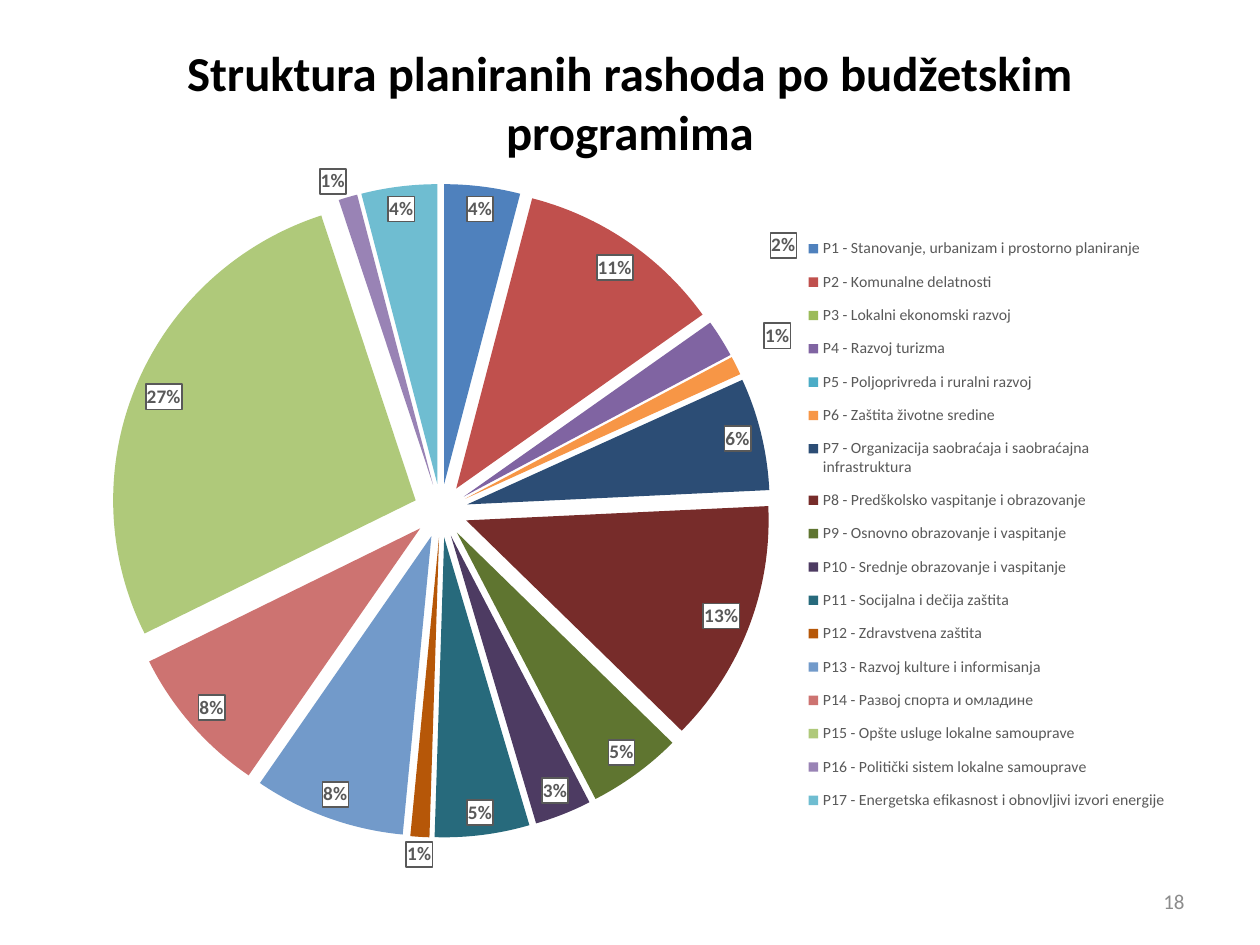
from pptx import Presentation
from pptx.chart.data import CategoryChartData
from pptx.dml.color import RGBColor
from pptx.enum.chart import XL_CHART_TYPE as ChartType, XL_LEGEND_POSITION as LegendPos
from pptx.enum.text import MSO_ANCHOR as Anchor, PP_ALIGN as Align
from pptx.oxml import parse_xml
from pptx.oxml.ns import nsdecls, qn
from pptx.util import Inches, Pt

FONT = "Calibri"
BLACK = RGBColor(0x00, 0x00, 0x00)
GRAY = RGBColor(0x59, 0x59, 0x59)
LIGHT_GRAY = RGBColor(0x8C, 0x8C, 0x8C)
WHITE = RGBColor(0xFF, 0xFF, 0xFF)

# Budget programme, share in percent, slice colour
PROGRAMMES = [
    ("P1 - Stanovanje, urbanizam i prostorno planiranje", 4, RGBColor(0x4F, 0x81, 0xBD)),
    ("P2 - Komunalne delatnosti", 11, RGBColor(0xC0, 0x50, 0x4D)),
    ("P3 - Lokalni ekonomski razvoj", 0, RGBColor(0x9B, 0xBB, 0x59)),
    ("P4 - Razvoj turizma", 2, RGBColor(0x80, 0x64, 0xA2)),
    ("P5 - Poljoprivreda i ruralni razvoj", 0, RGBColor(0x4B, 0xAC, 0xC6)),
    ("P6 - Zaštita životne sredine", 1, RGBColor(0xF7, 0x96, 0x46)),
    ("P7 - Organizacija saobraćaja i saobraćajna infrastruktura", 6, RGBColor(0x2C, 0x4D, 0x75)),
    ("P8 - Predškolsko vaspitanje i obrazovanje", 13, RGBColor(0x77, 0x2C, 0x2A)),
    ("P9 - Osnovno obrazovanje i vaspitanje", 5, RGBColor(0x5F, 0x75, 0x30)),
    ("P10 - Srednje obrazovanje i vaspitanje", 3, RGBColor(0x4D, 0x3B, 0x62)),
    ("P11 - Socijalna i dečija zaštita", 5, RGBColor(0x27, 0x6A, 0x7C)),
    ("P12 - Zdravstvena zaštita", 1, RGBColor(0xB6, 0x57, 0x08)),
    ("P13 - Razvoj kulture i informisanja", 8, RGBColor(0x72, 0x9A, 0xCA)),
    ("P14 - Развој спорта и омладине", 8, RGBColor(0xCD, 0x73, 0x71)),
    ("P15 - Opšte usluge lokalne samouprave", 27, RGBColor(0xAF, 0xC9, 0x7A)),
    ("P16 - Politički sistem lokalne samouprave", 1, RGBColor(0x99, 0x83, 0xB5)),
    ("P17 - Energetska efikasnost i obnovljivi izvori energije", 4, RGBColor(0x6F, 0xBD, 0xD1)),
]
# Labels of the crowded slices, moved by a share of the chart size
LABEL_SHIFTS = {2: (0, -0.1), 3: (0.04, -0.11), 4: (0.03, -0.06), 5: (0.02, -0.02)}


def add_text(slide, box, text, size, color, align, bold=False):
    tf = slide.shapes.add_textbox(*map(Inches, box)).text_frame
    tf.word_wrap = True
    tf.vertical_anchor = Anchor.MIDDLE
    p = tf.paragraphs[0]
    p.alignment = align
    r = p.add_run()
    r.text = text
    r.font.name, r.font.size, r.font.bold = FONT, Pt(size), bold
    r.font.color.rgb = color


def layout_xml(x, y, size=None, inner=False):
    """Manual layout: an offset for a label, a full box when a size is given."""
    target = '<c:layoutTarget val="inner"/>' if inner else ""
    modes = '<c:xMode val="edge"/><c:yMode val="edge"/>' if size else ""
    extent = f'<c:w val="{size[0]}"/><c:h val="{size[1]}"/>' if size else ""
    return (f'<c:layout {nsdecls("c")}><c:manualLayout>{target}{modes}'
            f'<c:x val="{x}"/><c:y val="{y}"/>{extent}</c:manualLayout></c:layout>')


def labels_xml():
    """Boxed percent labels, with the crowded ones shifted."""
    style = (
        '<c:numFmt formatCode="0%" sourceLinked="0"/>'
        f'<c:spPr><a:solidFill><a:srgbClr val="{WHITE}"/></a:solidFill>'
        f'<a:ln w="12700"><a:solidFill><a:srgbClr val="{GRAY}"/></a:solidFill></a:ln></c:spPr>'
        '<c:txPr><a:bodyPr/><a:lstStyle/><a:p><a:pPr><a:defRPr sz="1100" b="1">'
        f'<a:solidFill><a:srgbClr val="{GRAY}"/></a:solidFill><a:latin typeface="{FONT}"/>'
        '</a:defRPr></a:pPr><a:endParaRPr lang="sr-Latn-RS"/></a:p></c:txPr>'
        '<c:dLblPos val="bestFit"/><c:showLegendKey val="0"/><c:showVal val="0"/>'
        '<c:showCatName val="0"/><c:showSerName val="0"/><c:showPercent val="1"/>'
        '<c:showBubbleSize val="0"/>')
    shifted = "".join(
        f'<c:dLbl><c:idx val="{i}"/>{layout_xml(*shift)}{style}</c:dLbl>'
        for i, shift in LABEL_SHIFTS.items())
    return (f'<c:dLbls {nsdecls("c", "a")}>{shifted}{style}'
            '<c:showLeaderLines val="0"/></c:dLbls>')


def add_programme_pie(slide, box):
    data = CategoryChartData()
    data.categories = [name for name, _, _ in PROGRAMMES]
    data.add_series("Series 1", [share for _, share, _ in PROGRAMMES])
    chart = slide.shapes.add_chart(ChartType.PIE, *map(Inches, box), data).chart
    chart.has_title = False
    chart.font.name, chart.font.size = FONT, Pt(10)
    chart.font.color.rgb = BLACK

    # Slices
    plot = chart.plots[0]
    plot.vary_by_categories = True
    series = plot.series[0]
    for i, (_, _, color) in enumerate(PROGRAMMES):
        fill = series.points[i].format.fill
        fill.solid()
        fill.fore_color.rgb = color

    # Explosion and labels
    ser = series._element
    ser.find(qn("c:dPt")).addprevious(
        parse_xml(f'<c:explosion {nsdecls("c")} val="9"/>'))
    ser.find(qn("c:cat")).addprevious(parse_xml(labels_xml()))

    # Plot position
    area = chart.element.chart.plotArea if hasattr(chart, "element") else ser.getparent().getparent()
    for old in area.findall(qn("c:layout")):
        area.remove(old)
    area.insert(0, parse_xml(layout_xml(0.02, 0.02, (0.61, 0.94), inner=True)))

    # Legend
    chart.has_legend = True
    legend = chart.legend
    legend.position = LegendPos.RIGHT
    legend.include_in_layout = False
    legend.font.name, legend.font.size = FONT, Pt(9)
    legend.font.color.rgb = GRAY
    element = legend._element
    for old in element.findall(qn("c:layout")):
        element.remove(old)
    element.find(qn("c:legendPos")).addnext(
        parse_xml(layout_xml(0.66, 0.08, (0.34, 0.86))))


def main():
    prs = Presentation()
    prs.slide_width, prs.slide_height = Inches(10), Inches(7.5)
    slide = prs.slides.add_slide(prs.slide_layouts[6])
    add_text(slide, (0.5, 0.3, 9, 1.01),
             "Struktura planiranih rashoda po budžetskim programima",
             27.9, BLACK, Align.CENTER, bold=True)
    add_text(slide, (7.17, 6.95, 2.33, 0.4), "18", 12, LIGHT_GRAY, Align.RIGHT)
    add_programme_pie(slide, (0.71, 1.31, 8.58, 5.59))
    prs.save("out.pptx")


if __name__ == "__main__":
    main()
